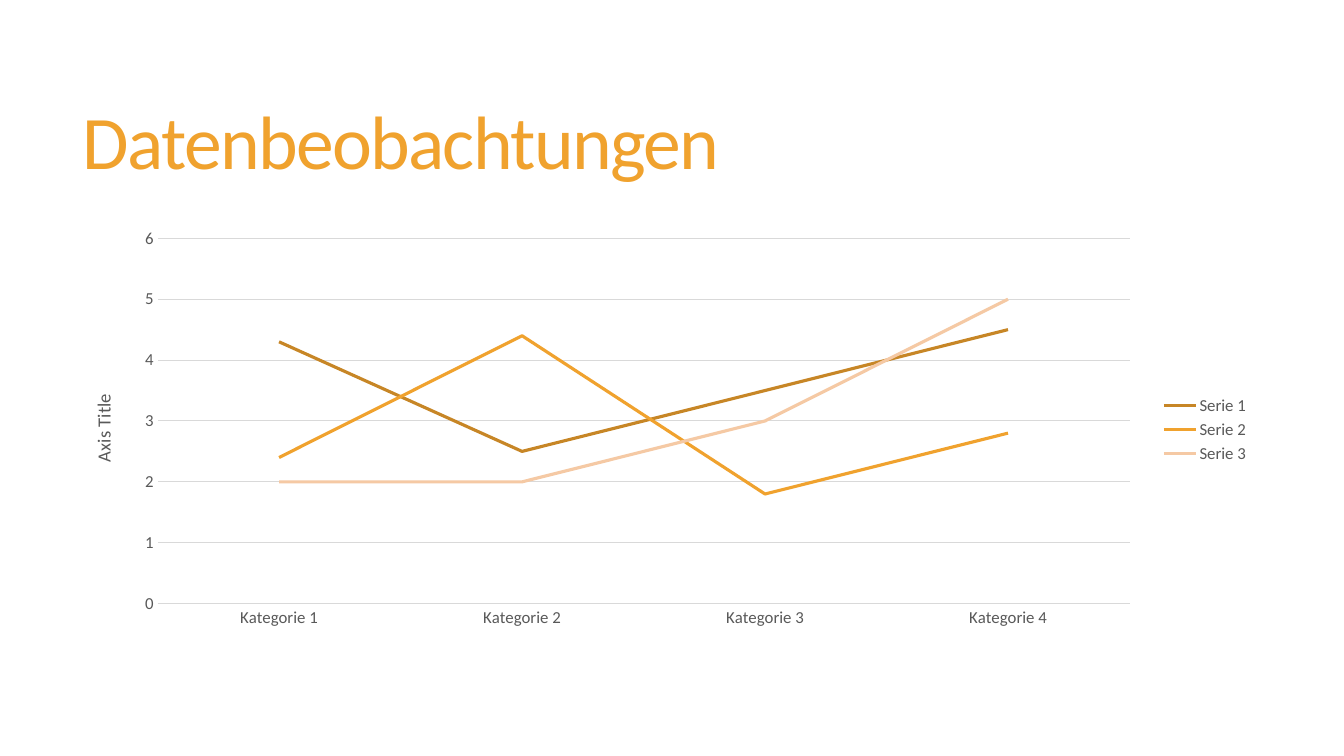
from lxml.etree import SubElement
from pptx import Presentation
from pptx.chart.data import CategoryChartData as ChartData
from pptx.dml.color import RGBColor as RGB
from pptx.enum.chart import XL_CHART_TYPE as ChartType, XL_LEGEND_POSITION as LegendPos, XL_TICK_MARK as Tick
from pptx.enum.text import MSO_ANCHOR as Anchor
from pptx.oxml.ns import qn
from pptx.util import Pt

COLORS = {"title": "F0A22E", "label": "595959", "grid": "D9D9D9",
          "Serie 1": "C78626", "Serie 2": "F0A22E", "Serie 3": "F5C9A4"}
CATEGORIES = [f"Kategorie {number}" for number in range(1, 5)]
OBSERVATIONS = {"Serie 1": (4.3, 2.5, 3.5, 4.5),
                "Serie 2": (2.4, 4.4, 1.8, 2.8),
                "Serie 3": (2, 2, 3, 5)}
PLOT_LAYOUT = {"layoutTarget": "inner", "xMode": "edge", "yMode": "edge",
               "x": 0.07, "y": 0.04, "w": 0.82, "h": 0.88}


def apply(target, values):
    for name, value in values.items():
        setattr(target, name, value)


class SlideBuilder:
    typeface = "Calibri"

    def __init__(self, slide):
        self.slide = slide

    def style_font(self, font, size, color):
        apply(font, {"name": self.typeface, "size": Pt(size), "bold": False})
        font.color.rgb = RGB.from_string(COLORS[color])

    def style_line(self, line, width, color):
        line.width = Pt(width)
        line.color.rgb = RGB.from_string(COLORS[color])

    def heading(self, text, left, top, width, height):
        frame = self.slide.shapes.add_textbox(Pt(left), Pt(top), Pt(width), Pt(height)).text_frame
        apply(frame, {"word_wrap": True, "vertical_anchor": Anchor.MIDDLE})
        paragraph = frame.paragraphs[0]
        paragraph.line_spacing = 0.85
        run = paragraph.add_run()
        run.text = text
        self.style_font(run.font, 54, "title")
        run._r.get_or_add_rPr().set("spc", "-120")

    def line_chart(self, categories, observations, axis_title, left, top, width, height):
        data = ChartData()
        data.categories = categories
        for name, values in observations.items():
            data.add_series(name, values)
        chart = self.slide.shapes.add_chart(
            ChartType.LINE, Pt(left), Pt(top), Pt(width), Pt(height), data).chart
        apply(chart, {"has_title": False, "has_legend": True})
        self.style_font(chart.font, 12, "label")
        apply(chart.legend, {"position": LegendPos.RIGHT, "include_in_layout": False})
        self.style_font(chart.legend.font, 12, "label")
        for series in chart.plots[0].series:
            series.smooth = False
            self.style_line(series.format.line, 2.25, series.name)
        self.style_axes(chart, axis_title)
        self.place_plot(chart)

    def style_axes(self, chart, axis_title):
        for axis in (chart.category_axis, chart.value_axis):
            apply(axis, {"major_tick_mark": Tick.NONE, "minor_tick_mark": Tick.NONE})
            self.style_font(axis.tick_labels.font, 12, "label")
        self.style_line(chart.category_axis.format.line, 0.75, "grid")
        scale = chart.value_axis
        apply(scale, {"minimum_scale": 0, "maximum_scale": 6, "major_unit": 1,
                      "has_major_gridlines": True})
        scale.format.line.fill.background()
        self.style_line(scale.major_gridlines.format.line, 0.75, "grid")
        title = scale.axis_title.text_frame
        title.text = axis_title
        self.style_font(title.paragraphs[0].runs[0].font, 13.3, "label")
        title._txBody.find(qn("a:bodyPr")).set("rot", "-5400000")

    def place_plot(self, chart):
        plot_area = chart._chartSpace.chart.plotArea
        layout = plot_area.find(qn("c:layout"))
        if layout is None:
            layout = SubElement(plot_area, qn("c:layout"))
            plot_area.insert(0, layout)
        manual = SubElement(layout, qn("c:manualLayout"))
        for name, value in PLOT_LAYOUT.items():
            SubElement(manual, qn(f"c:{name}")).set("val", str(value))


def main():
    deck = Presentation()
    apply(deck, {"slide_width": Pt(960), "slide_height": Pt(540)})
    builder = SlideBuilder(deck.slides.add_slide(deck.slide_layouts[6]))
    builder.heading("Datenbeobachtungen", 52, 39.6, 848, 130.4)
    builder.line_chart(CATEGORIES, OBSERVATIONS, "Axis Title", 53.3, 158.4, 846.7, 296.6)
    deck.save("out.pptx")


if __name__ == "__main__":
    main()
